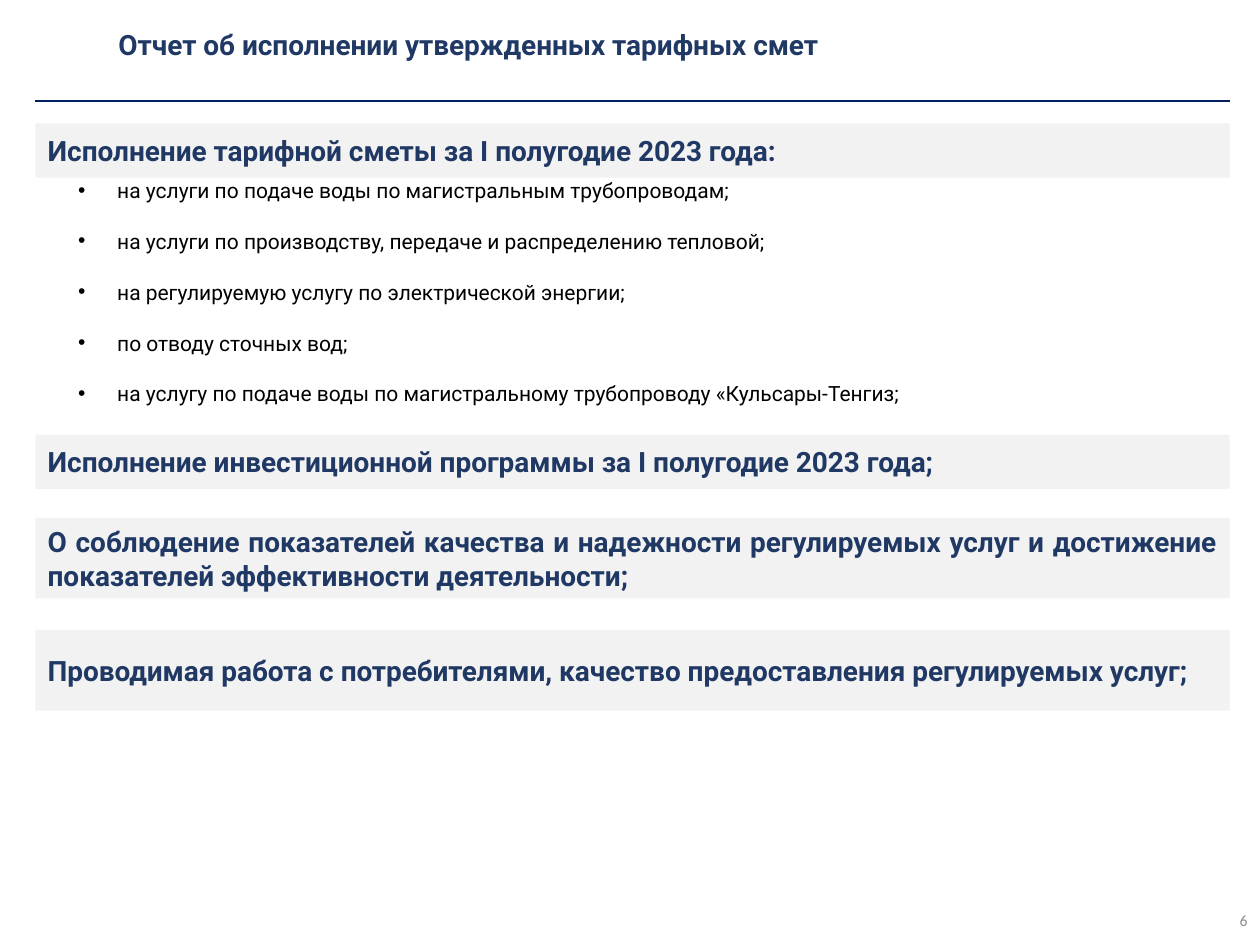
from lxml import etree
from pptx import Presentation
from pptx.dml.color import RGBColor
from pptx.enum.shapes import MSO_CONNECTOR, MSO_SHAPE
from pptx.enum.text import MSO_ANCHOR, MSO_AUTO_SIZE, PP_ALIGN
from pptx.oxml.ns import qn
from pptx.util import Inches, Pt

NAVY = RGBColor(0x20, 0x38, 0x64)
RULE_BLUE = RGBColor(0x00, 0x20, 0x60)
BAND_GRAY = RGBColor(0xF2, 0xF2, 0xF2)
NUMBER_GRAY = RGBColor(0x8C, 0x8C, 0x8C)
BLACK = RGBColor(0x00, 0x00, 0x00)

HEADING = {"name": "Roboto", "size": Pt(16), "bold": True}
ITEM = {"name": "Roboto", "size": Pt(12), "bold": False}
NUMBER = {"name": "Calibri", "size": Pt(9), "bold": False}

LEFT, WIDTH = 0.28, 9.48
INDENT = Inches(0.31)

TITLE = "Отчет об исполнении утвержденных тарифных смет"
SERVICES = [
    "на услуги по подаче воды по магистральным трубопроводам;",
    "на услуги по производству, передаче и распределению тепловой;",
    "на регулируемую услугу по электрической энергии;",
    "по отводу сточных вод;",
    "на услугу по подаче воды по магистральному трубопроводу «Кульсары-Тенгиз;",
]
# (top, height, text)
BANDS = [
    (0.98, 0.43, "Исполнение тарифной сметы за I полугодие 2023 года:"),
    (3.45, 0.43, "Исполнение инвестиционной программы за I полугодие 2023 года;"),
    (4.11, 0.64, "О соблюдение показателей качества и надежности регулируемых услуг "
                 "и достижение показателей эффективности деятельности;"),
    (5.0, 0.64, "Проводимая работа с потребителями, качество предоставления "
                "регулируемых услуг;"),
]


def place(shape, box):
    shape.left, shape.top, shape.width, shape.height = map(Inches, box)


def write(shape, lines, font_format, color, alignment):
    """Fill the shape with one formatted paragraph per line."""
    frame = shape.text_frame
    frame.text = "\n".join(lines)
    frame.word_wrap = True
    frame.auto_size = MSO_AUTO_SIZE.NONE
    frame.vertical_anchor = MSO_ANCHOR.MIDDLE
    for paragraph in frame.paragraphs:
        paragraph.alignment = alignment
        paragraph.space_before = Pt(0)
        for run in paragraph.runs:
            for name, value in font_format.items():
                setattr(run.font, name, value)
            run.font.color.rgb = color


def add_header(slide, box, rule_top):
    title = slide.shapes.title
    place(title, box)
    write(title, [TITLE], HEADING, NAVY, PP_ALIGN.LEFT)
    rule = slide.shapes.add_connector(
        MSO_CONNECTOR.STRAIGHT, Inches(LEFT), Inches(rule_top),
        Inches(LEFT + WIDTH), Inches(rule_top))
    rule.line.color.rgb = RULE_BLUE
    rule.line.width = Pt(1)
    etree.SubElement(rule._element.spPr, qn("a:effectLst"))


def add_band(slide, box, text):
    band = slide.shapes.add_shape(MSO_SHAPE.RECTANGLE, *map(Inches, box))
    band.shadow.inherit = False
    band.fill.solid()
    band.fill.fore_color.rgb = BAND_GRAY
    band.line.fill.background()
    write(band, [text], HEADING, NAVY, PP_ALIGN.JUSTIFY)


def add_service_list(slide, box):
    body = slide.placeholders[1]
    place(body, box)
    write(body, SERVICES, ITEM, BLACK, PP_ALIGN.JUSTIFY)
    for index, paragraph in enumerate(body.text_frame.paragraphs):
        properties = paragraph._p.get_or_add_pPr()
        properties.set("marL", str(INDENT))
        properties.set("indent", str(-INDENT))
        if index:
            paragraph.space_before = Pt(14.7)


def add_page_number(slide, box):
    number = slide.shapes.add_textbox(*map(Inches, box))
    write(number, ["6"], NUMBER, NUMBER_GRAY, PP_ALIGN.RIGHT)


def main():
    presentation = Presentation()
    presentation.slide_width = Inches(10)
    presentation.slide_height = Inches(7.5)
    slide = presentation.slides.add_slide(presentation.slide_layouts[1])

    add_header(slide, (0.84, 0.14, 8.93, 0.42), rule_top=0.8)
    for top, height, text in BANDS:
        add_band(slide, (LEFT, top, WIDTH, height), text)
    add_service_list(slide, (0.52, 1.39, 9.24, 1.85))
    add_page_number(slide, (7.75, 7.1, 2.25, 0.4))
    presentation.save("out.pptx")


if __name__ == "__main__":
    main()
